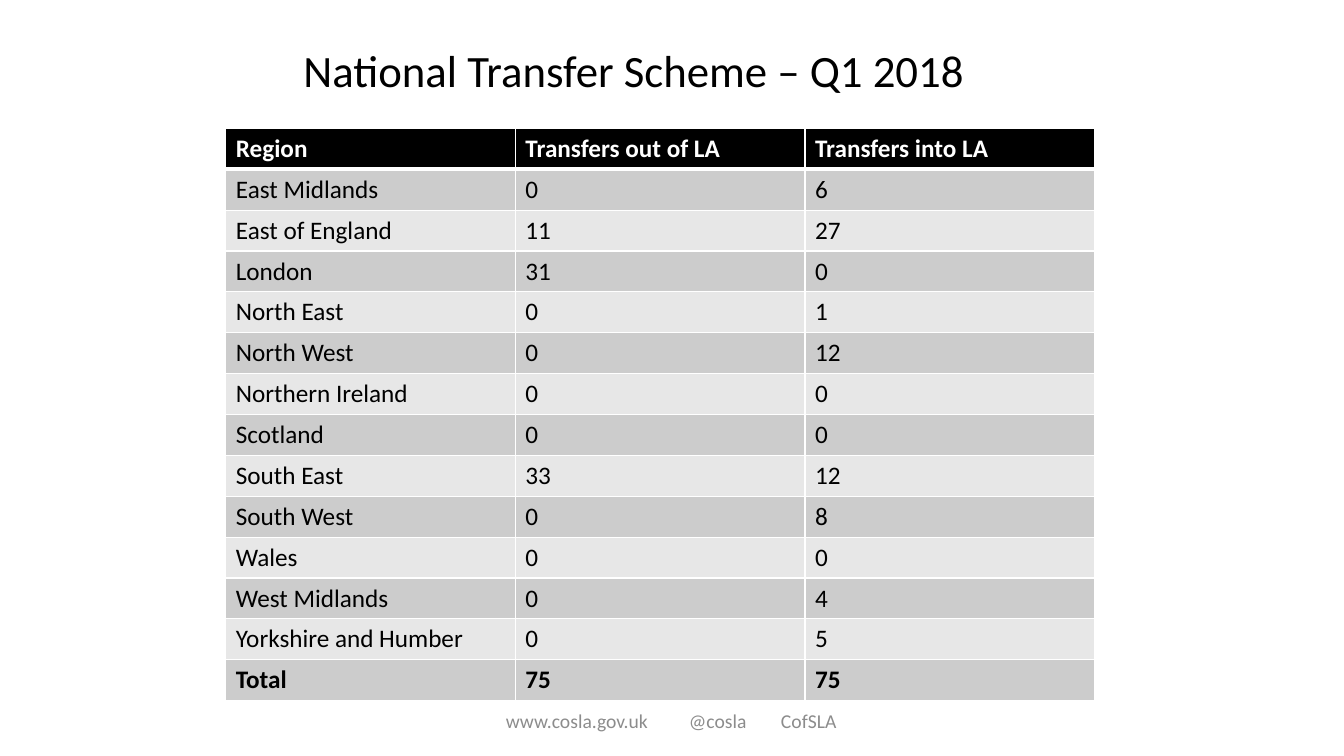
from lxml.etree import SubElement
from pptx import Presentation
from pptx.dml.color import RGBColor
from pptx.enum.text import MSO_ANCHOR as Anchor, MSO_AUTO_SIZE as AutoSize, PP_ALIGN as Align
from pptx.oxml.ns import qn
from pptx.util import Pt

HEADINGS = ("Region", "Transfers out of LA", "Transfers into LA")
TRANSFERS = (
    ("East Midlands", 0, 6),
    ("East of England", 11, 27),
    ("London", 31, 0),
    ("North East", 0, 1),
    ("North West", 0, 12),
    ("Northern Ireland", 0, 0),
    ("Scotland", 0, 0),
    ("South East", 33, 12),
    ("South West", 0, 8),
    ("Wales", 0, 0),
    ("West Midlands", 0, 4),
    ("Yorkshire and Humber", 0, 5),
)
TOTAL = ("Total", *(sum(region[i] for region in TRANSFERS) for i in (1, 2)))
CONTACTS = ("www.cosla.gov.uk", "@cosla", "CofSLA")


def colour(hex_code):
    """Turn a hex string into a colour."""
    return RGBColor.from_string(hex_code)


def write(frame, text, size=18, hex_code="000000", bold=False, anchor=Anchor.TOP, spacing=None, tabs=()):
    """Write one formatted, left-aligned paragraph into a text frame."""
    frame.word_wrap = True
    frame.vertical_anchor = anchor
    paragraph = frame.paragraphs[0]
    paragraph.text = text
    paragraph.alignment = Align.LEFT
    paragraph.line_spacing = spacing
    if tabs:
        stops = SubElement(paragraph._p.get_or_add_pPr(), qn("a:tabLst"))
        for position in tabs:
            SubElement(stops, qn("a:tab"), pos=str(Pt(position)), algn="l")
    font = paragraph.runs[0].font
    font.name, font.size, font.bold = "Calibri", Pt(size), bold
    font.color.rgb = colour(hex_code)


def rule_cell(cell, top, bottom):
    """Draw white rules on the four sides of a table cell."""
    properties = cell._tc.get_or_add_tcPr()
    for index, (side, weight) in enumerate((("L", 1), ("R", 1), ("T", top), ("B", bottom))):
        line = properties.makeelement(qn(f"a:ln{side}"), {"w": str(Pt(weight))})
        fill = SubElement(line, qn("a:solidFill"))
        SubElement(fill, qn("a:srgbClr"), val="FFFFFF")
        properties.insert(index, line)


def add_title(slide, left, top, width, height):
    """Place the slide heading in its placeholder."""
    title = slide.shapes.title
    title.left, title.top, title.width, title.height = map(Pt, (left, top, width, height))
    write(title.text_frame, "National Transfer Scheme – Q1 2018", size=32, anchor=Anchor.BOTTOM, spacing=0.9)
    title.text_frame.auto_size = AutoSize.NONE


def add_transfers(slide, left, top, width, height):
    """Place the table of transfers by region."""
    rows = (HEADINGS, *TRANSFERS, TOTAL)
    box = map(Pt, (left, top, width, height))
    table = slide.shapes.add_table(len(rows), len(HEADINGS), *box).table
    for column in table.columns:
        column.width = Pt(width / len(HEADINGS))
    for r, row in enumerate(rows):
        table.rows[r].height = Pt(height / len(rows))
        heading = row is HEADINGS
        for c, entry in enumerate(row):
            cell = table.cell(r, c)
            cell.fill.solid()
            cell.fill.fore_color.rgb = colour("000000" if heading else ("E7E7E7", "CCCCCC")[r % 2])
            rule_cell(cell, top=3 if r == 1 else 1, bottom=3 if heading else 1)
            write(cell.text_frame, str(entry), hex_code="FFFFFF" if heading else "000000",
                  bold=heading or row is TOTAL)


def add_contacts(slide, left, top, width, height):
    """Place the contact line at the foot of the slide."""
    frame = slide.shapes.add_textbox(*map(Pt, (left, top, width, height))).text_frame
    frame.margin_left = Pt(43.2)
    write(frame, "\t".join(CONTACTS), size=14, hex_code="8C8C8C", anchor=Anchor.MIDDLE, tabs=(130.7, 196.5))


def main():
    """Build and save the slide."""
    deck = Presentation()
    deck.slide_width, deck.slide_height = Pt(960), Pt(540)
    slide = deck.slides.add_slide(deck.slide_layouts.get_by_name("Title Only"))
    add_title(slide, 209.5, 3.6, 508.3, 69.1)
    add_contacts(slide, 318.2, 500.4, 324, 28.8)
    add_transfers(slide, 161.3, 91.7, 620.6, 408.8)
    deck.save("out.pptx")


if __name__ == "__main__":
    main()
